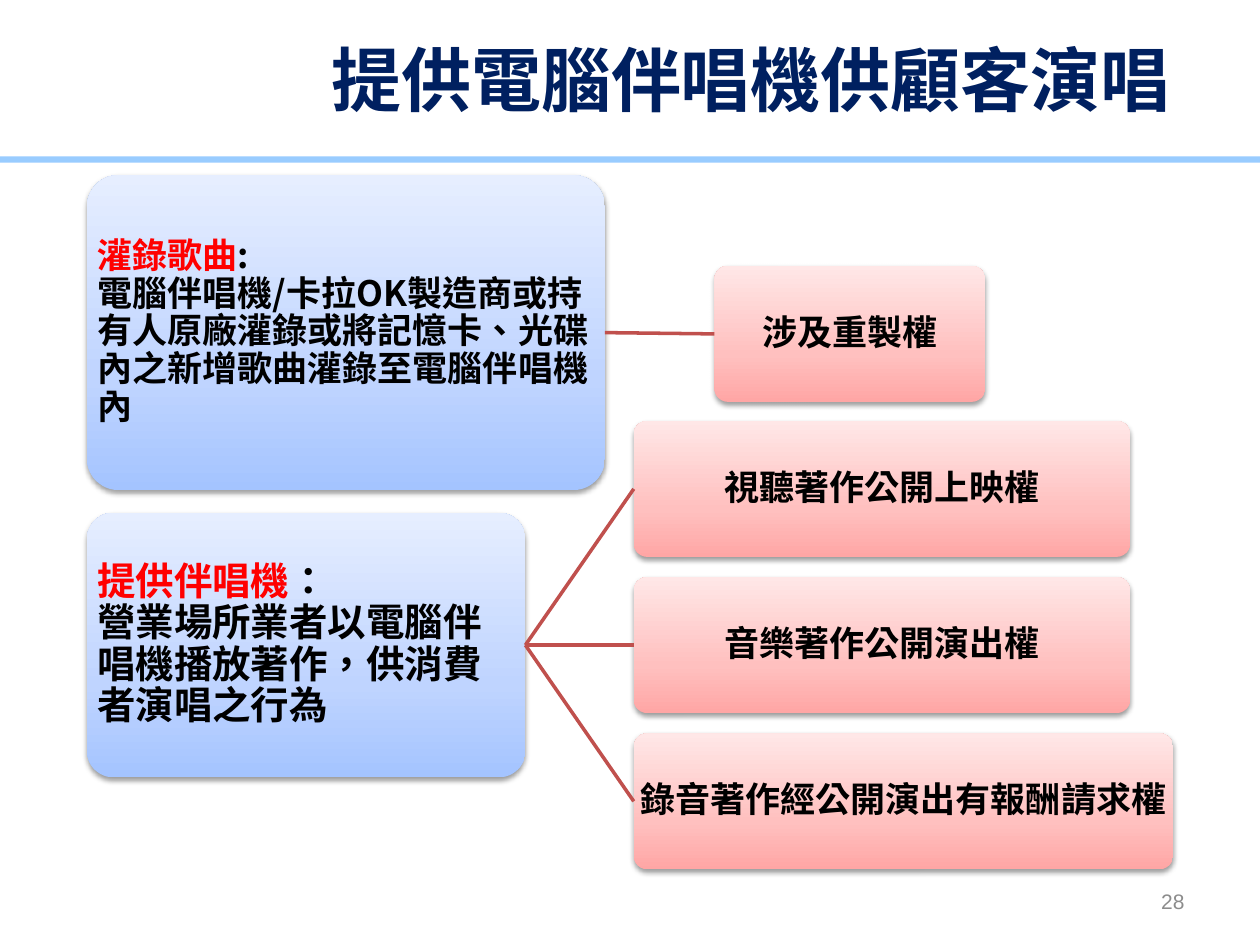
from lxml import etree
from pptx import Presentation
from pptx.dml.color import RGBColor
from pptx.enum.shapes import MSO_CONNECTOR, MSO_SHAPE
from pptx.enum.text import MSO_ANCHOR, PP_ALIGN
from pptx.oxml import parse_xml
from pptx.oxml.ns import nsdecls, qn
from pptx.util import Inches, Pt

LEFT, CENTER, RIGHT = PP_ALIGN.LEFT, PP_ALIGN.CENTER, PP_ALIGN.RIGHT
MIDDLE = MSO_ANCHOR.MIDDLE
RIGHT_SIDE, LEFT_SIDE = 3, 1

NAVY = RGBColor(0x00, 0x20, 0x60)
SKY = RGBColor(0x99, 0xCC, 0xFF)
RED = RGBColor(0xFF, 0x00, 0x00)
BLACK = RGBColor(0x00, 0x00, 0x00)
BRICK = RGBColor(0xC0, 0x50, 0x4D)
GRAY = RGBColor(0x8C, 0x8C, 0x8C)
BLUE_STOPS = ((0, "A4C4FF"), (35, "BFD4FF"), (100, "E6EEFF"))
PINK_STOPS = ((0, "FFA6A5"), (35, "FFC0BF"), (100, "FFE7E7"))
CJK = "Noto Sans CJK SC"

TITLE = "提供電腦伴唱機供顧客演唱"
PAGE_NUMBER = "28"
ACTIVITIES = [
    {
        "place": (0.69, 1.39, 4.11, 2.5), "size": 20, "inset": 0.01,
        "lines": [[("灌錄歌曲", RED), (":", BLACK)],
                  [("電腦伴唱機/卡拉OK製造商或持有人原廠灌錄或將記憶卡、"
                    "光碟內之新增歌曲灌錄至電腦伴唱機內", BLACK)]],
        "rights_top": 2.11,
        "rights": [("涉及重製權", 5.67, 2.15)],
    },
    {
        "place": (0.69, 4.07, 3.48, 2.1), "size": 22, "inset": 0.02,
        "lines": [[("提供伴唱機", RED), ("：", BLACK)],
                  [("營業場所業者以電腦伴唱機播放著作，供消費者演唱之行為", BLACK)]],
        "rights_top": 3.34,
        "rights": [("視聽著作公開上映權", 5.03, 3.94),
                   ("音樂著作公開演出權", 5.03, 3.94),
                   ("錄音著作經公開演出有報酬請求權", 5.03, 4.28)],
    },
]
RIGHT_HEIGHT, RIGHT_STEP = 1.08, 1.24


def write(frame, lines, size, align, inset, bold=True, font=CJK, spacing=0.9):
    """Fill a text frame; each line is a list of (text, colour) spans."""
    frame.word_wrap = True
    frame.vertical_anchor = MIDDLE
    for side in ("left", "right", "top", "bottom"):
        setattr(frame, f"margin_{side}", Inches(inset))
    for index, line in enumerate(lines):
        para = frame.add_paragraph() if index else frame.paragraphs[0]
        para.alignment = align
        para.line_spacing = spacing
        for text, color in line:
            span = para.add_run()
            span.text = text
            for name, value in {"size": Pt(size), "bold": bold, "name": font}.items():
                setattr(span.font, name, value)
            span.font.color.rgb = color
            properties = span.font._element
            properties.set("lang", "zh-TW")
            etree.SubElement(properties, qn("a:ea")).set("typeface", font)


def add_card(page, place, stops):
    """Rounded box with a vertical gradient and a soft shadow."""
    box = page.shapes.add_shape(MSO_SHAPE.ROUNDED_RECTANGLE, *map(Inches, place))
    box.adjustments[0] = 0.1
    box.line.fill.background()
    box.shadow.inherit = False
    stop_xml = "".join(
        f'<a:gs pos="{position * 1000}"><a:srgbClr val="{color}"/></a:gs>'
        for position, color in stops)
    gradient = parse_xml(
        f'<a:gradFill {nsdecls("a")} rotWithShape="1"><a:gsLst>{stop_xml}</a:gsLst>'
        '<a:lin ang="16200000" scaled="0"/></a:gradFill>')
    properties = box._element.spPr
    properties.find(qn("a:prstGeom")).addnext(gradient)
    properties.find(qn("a:effectLst")).append(parse_xml(
        f'<a:outerShdw {nsdecls("a")} blurRad="{Pt(3.1)}" dist="{Pt(1.6)}" '
        'dir="5400000" rotWithShape="0"><a:srgbClr val="000000">'
        '<a:alpha val="38000"/></a:srgbClr></a:outerShdw>'))
    return box


def join(page, source, target):
    line = page.shapes.add_connector(MSO_CONNECTOR.STRAIGHT, 0, 0, 0, 0)
    line.begin_connect(source, RIGHT_SIDE)
    line.end_connect(target, LEFT_SIDE)
    line.line.color.rgb = BRICK
    line.line.width = Pt(2)
    etree.SubElement(line._element.spPr, qn("a:effectLst"))


def main():
    deck = Presentation()
    deck.slide_width, deck.slide_height = Inches(10), Inches(7.5)
    page = deck.slides.add_slide(deck.slide_layouts[5])

    title = page.shapes.title
    title.left, title.top, title.width, title.height = map(Inches, (1.46, 0, 9, 1.25))
    write(title.text_frame, [[(TITLE, NAVY)]], 40, CENTER, 0.05, spacing=1.0)

    rule = page.shapes.add_shape(
        MSO_SHAPE.RECTANGLE, *map(Inches, (-0.04, 1.24, 10.06, 0.05)))
    rule.fill.solid()
    rule.fill.fore_color.rgb = SKY
    rule.line.fill.background()
    rule.shadow.inherit = False

    for activity in ACTIVITIES:
        source = add_card(page, activity["place"], BLUE_STOPS)
        write(source.text_frame, activity["lines"], activity["size"], LEFT,
              activity["inset"])
        for row, (text, left, width) in enumerate(activity["rights"]):
            top = activity["rights_top"] + row * RIGHT_STEP
            target = add_card(page, (left, top, width, RIGHT_HEIGHT), PINK_STOPS)
            write(target.text_frame, [[(text, BLACK)]], 20, CENTER, 0.01)
            join(page, source, target)

    number = page.shapes.add_textbox(*map(Inches, (7.17, 6.95, 2.33, 0.4)))
    write(number.text_frame, [[(PAGE_NUMBER, GRAY)]], 12, RIGHT, 0.1,
          bold=False, font="Arial", spacing=1.0)

    deck.save("out.pptx")


if __name__ == "__main__":
    main()
